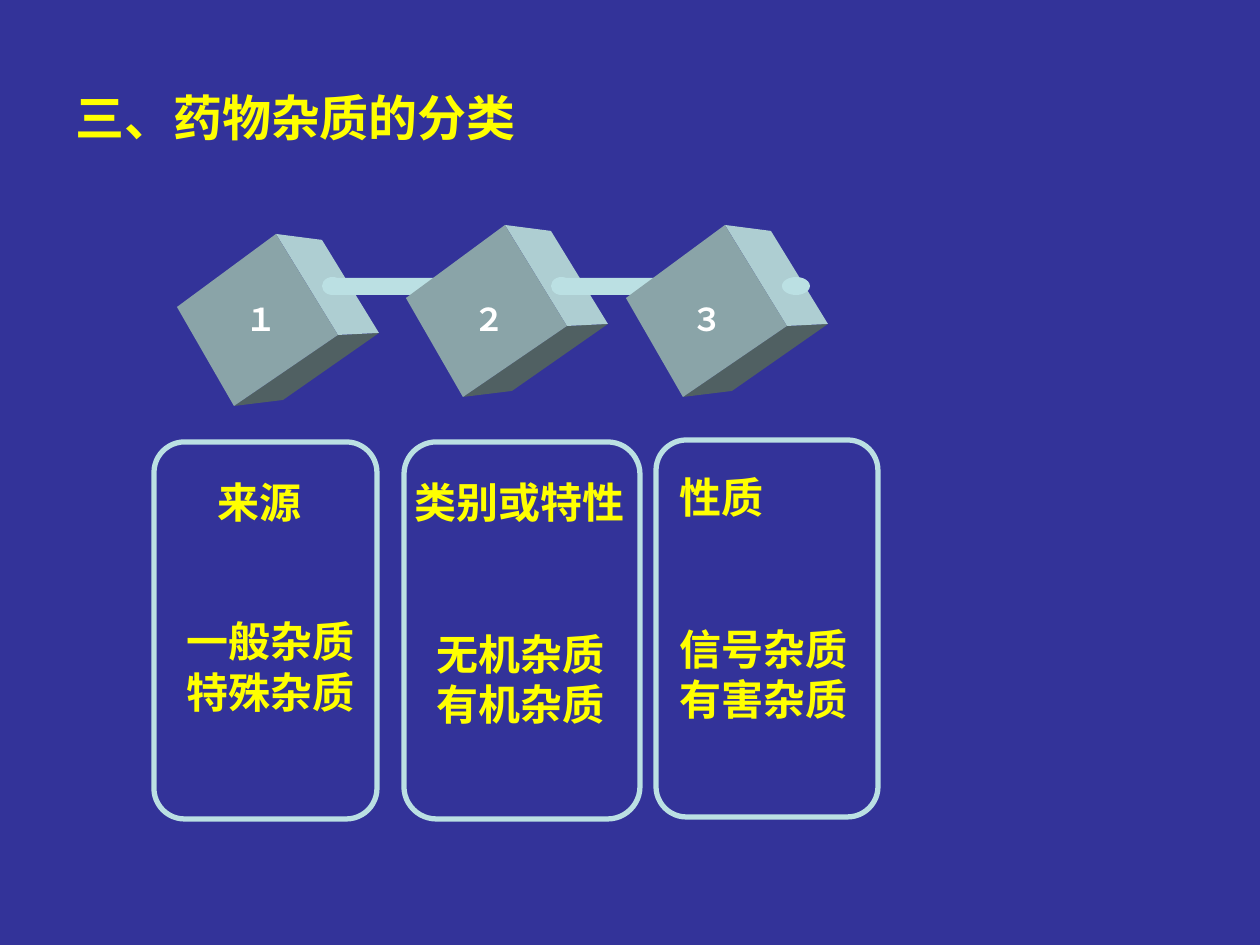
from pptx import Presentation
from pptx.dml.color import RGBColor
from pptx.enum.shapes import MSO_SHAPE as Shape
from pptx.enum.text import MSO_ANCHOR as Anchor, PP_ALIGN as Align
from pptx.util import Emu, Pt

SCALE = 914400 / 126
NAVY = RGBColor(0x33, 0x33, 0x99)
PALE = RGBColor(0xBB, 0xE0, 0xE3)
FRONT = RGBColor(0x8A, 0xA4, 0xA8)
SIDE = RGBColor(0xAE, 0xCE, 0xD2)
BASE = RGBColor(0x50, 0x60, 0x62)
YELLOW = RGBColor(0xFF, 0xFF, 0x00)
WHITE = RGBColor(0xFF, 0xFF, 0xFF)

FACES = (
    (BASE, ((161, 101), (202, 99), (106, 166), (57, 172))),
    (SIDE, ((99, 0), (145, 6), (202, 99), (161, 101))),
    (FRONT, ((0, 73), (99, 0), (161, 101), (57, 172))),
)
CUBES = ((177, 234), (406, 225), (626, 225))
PINS = ((322, 21), (551, 21), (782, 28))
NUMBERS = (("１", 233, 49), ("２", 461, 57), ("３", 679, 57))
FRAMES = ((154, 442, 223), (404, 442, 236), (656, 440, 222))
COLUMNS = (
    ((174, 470, 202, 252), "来源", ("一般杂质", "特殊杂质"), Align.LEFT, 18, 51),
    ((402, 470, 238, 267), "类别或特性", ("无机杂质", "有机杂质"), Align.CENTER, 0, 58),
    ((667, 465, 198, 302), "性质", ("信号杂质", "有害杂质"), Align.LEFT, 0, 58),
)


def px(length):
    """Turn pixels into EMU."""
    return Emu(round(length * SCALE))


class Painter:
    """Draws styled elements on the current slide."""

    def __init__(self, page):
        self.page = page
        page.background.fill.solid()
        page.background.fill.fore_color.rgb = NAVY

    def paint(self, shape, color):
        shape.shadow.inherit = False
        shape.fill.solid()
        shape.fill.fore_color.rgb = color
        shape.line.fill.background()

    def solid(self, kind, *bounds):
        self.paint(self.page.shapes.add_shape(kind, *map(px, bounds)), PALE)

    def frame(self, *bounds):
        shape = self.page.shapes.add_shape(Shape.ROUNDED_RECTANGLE, *map(px, bounds))
        shape.adjustments[0] = 0.137
        shape.shadow.inherit = False
        shape.fill.background()
        shape.line.color.rgb = PALE
        shape.line.width = Pt(3)

    def cube(self, left, top):
        for color, corners in FACES:
            points = [(left + x, top + y) for x, y in corners]
            builder = self.page.shapes.build_freeform(*points[0], scale=SCALE)
            builder.add_line_segments(points[1:], close=True)
            self.paint(builder.convert_to_shape(), color)

    def text(self, bounds, lines, size, color=YELLOW, anchor=Anchor.TOP, wrap=True):
        box = self.page.shapes.add_textbox(*map(px, bounds))
        frame = box.text_frame
        frame.word_wrap = wrap
        frame.vertical_anchor = anchor
        frame.text = "\n".join(lines)
        for para in frame.paragraphs:
            para.font.name = "Arial"
            para.font.size = Pt(size)
            para.font.bold = True
            para.font.color.rgb = color
        return frame.paragraphs

    def column(self, bounds, heading, items, align, indent, gap):
        title, *entries = self.text(bounds, (heading, *items), 24)
        title._p.get_or_add_pPr().set("indent", str(Pt(indent)))
        entries[0].space_before = Pt(gap)
        for entry in entries:
            entry.alignment = align


def main():
    deck = Presentation()
    deck.slide_width, deck.slide_height = px(1260), px(945)
    painter = Painter(deck.slides.add_slide(deck.slide_layouts[6]))
    painter.text((63, 38, 1134, 157), ("三、药物杂质的分类",), 28, anchor=Anchor.MIDDLE)
    for left, top, width in FRAMES:
        painter.frame(left, top, width, 377)
    for index, (corner, (left, width)) in enumerate(zip(CUBES, PINS)):
        painter.cube(*corner)
        painter.solid(Shape.OVAL, left, 277, width, 18)
        if index < len(CUBES) - 1:
            painter.solid(Shape.RECTANGLE, left + 12, 278, 103, 17)
    for number, left, width in NUMBERS:
        painter.text((left, 294, width, 50), (number,), 18, WHITE, wrap=False)
    for column in COLUMNS:
        painter.column(*column)
    deck.save("out.pptx")


if __name__ == "__main__":
    main()
